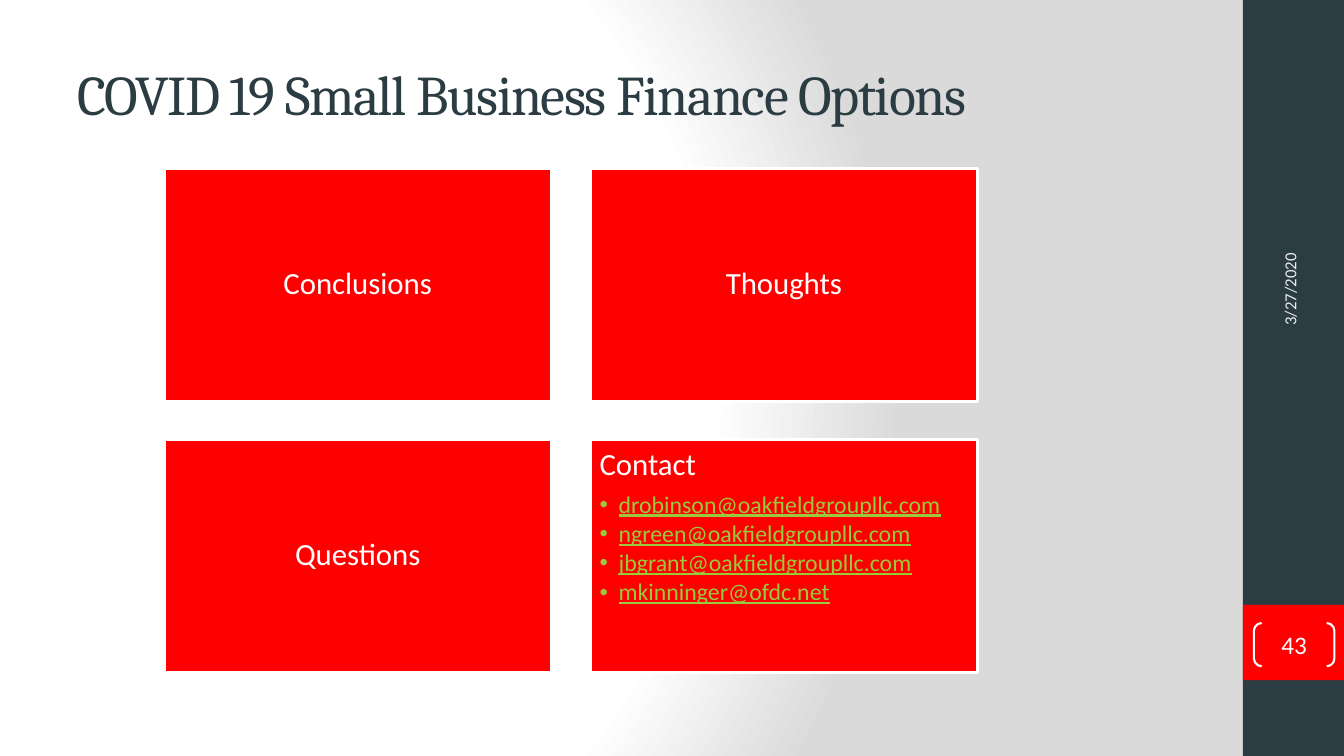
from dataclasses import dataclass

from lxml import etree
from pptx import Presentation
from pptx.dml.color import RGBColor
from pptx.enum.shapes import MSO_SHAPE
from pptx.enum.text import MSO_ANCHOR, MSO_AUTO_SIZE, PP_ALIGN
from pptx.oxml import parse_xml
from pptx.oxml.ns import qn
from pptx.util import Cm, Pt

RECTANGLE, BRACKETS = MSO_SHAPE.RECTANGLE, MSO_SHAPE.DOUBLE_BRACKET
TOP, MIDDLE = MSO_ANCHOR.TOP, MSO_ANCHOR.MIDDLE
LEFT, CENTER = PP_ALIGN.LEFT, PP_ALIGN.CENTER
NO_AUTOFIT = MSO_AUTO_SIZE.NONE


@dataclass(frozen=True)
class Theme:
    slate: str = "2C3C43"
    red: str = "FF0000"
    white: str = "FFFFFF"
    gray: str = "DADADA"
    green: str = "99CA3C"
    pale: str = "EBEBEB"
    heading_font: str = "Cambria"
    body_font: str = "Calibri"
    title_size: int = 40
    card_size: int = 22
    email_size: int = 17
    number_size: int = 18
    date_size: int = 12


THEME = Theme()


def write(frame, text, size, color=THEME.white, font=THEME.body_font, align=LEFT,
          anchor=MIDDLE, inset=None, bullet=False, underline=None,
          line_spacing=None, space_after=0, tracking=None):
    """Append one formatted paragraph, filling the empty first one if there is one."""
    frame.word_wrap = True
    frame.auto_size = NO_AUTOFIT
    frame.vertical_anchor = anchor
    if inset is not None:
        frame.margin_left = frame.margin_right = Cm(inset)
        frame.margin_top = frame.margin_bottom = Cm(inset)

    paragraph = frame.paragraphs[0] if not frame.text else frame.add_paragraph()
    properties = paragraph._p.get_or_add_pPr()
    indent = Cm(0.48) if bullet else 0
    properties.set("marL", str(indent))
    properties.set("indent", str(-indent))
    if bullet:
        etree.SubElement(properties, qn("a:buChar")).set("char", "•")
    else:
        etree.SubElement(properties, qn("a:buNone"))
    paragraph.alignment = align
    paragraph.line_spacing = line_spacing
    paragraph.space_before = Pt(0)
    paragraph.space_after = Pt(space_after)

    run = paragraph.add_run()
    run.text = text
    run.font.size = Pt(size)
    run.font.name = font
    run.font.color.rgb = RGBColor.from_string(color)
    run.font.underline = underline
    if tracking is not None:
        run._r.get_or_add_rPr().set("spc", str(tracking))


def paint(shape, fill=None, line=None, width=0):
    if fill:
        shape.fill.solid()
        shape.fill.fore_color.rgb = RGBColor.from_string(fill)
    else:
        shape.fill.background()
    if line:
        shape.line.color.rgb = RGBColor.from_string(line)
        shape.line.width = Pt(width)
    else:
        shape.line.fill.background()


deck = Presentation()
deck.slide_width, deck.slide_height = Cm(33.87), Cm(19.05)
slide = deck.slides.add_slide(deck.slide_layouts[1])
shapes = slide.shapes

# Background: white glow fading to gray on the right
slide.background.fill.solid()
solid = slide.background._cSld.bg.bgPr.find(qn("a:solidFill"))
stops = "".join(
    f'<a:gs pos="{position}"><a:srgbClr val="{color}"/></a:gs>'
    for position, color in ((0, THEME.white), (75000, THEME.white), (100000, THEME.gray)))
solid.getparent().replace(solid, parse_xml(
    '<a:gradFill xmlns:a="http://schemas.openxmlformats.org/drawingml/2006/main" '
    f'rotWithShape="1"><a:gsLst>{stops}</a:gsLst><a:path path="circle">'
    '<a:fillToRect l="20000" t="50000" r="100000" b="50000"/></a:path></a:gradFill>'))

# Sidebar with its page tab
for top, height, color in ((0, 19.05, THEME.slate), (15.24, 1.9, THEME.red)):
    band = shapes.add_shape(RECTANGLE, Cm(31.32), Cm(top), Cm(2.55), Cm(height))
    band.shadow.inherit = False
    paint(band, color)

title = shapes.title
title.left, title.top, title.width, title.height = Cm(1.7), Cm(0.76), Cm(28.22), Cm(3.18)
write(title.text_frame, "COVID 19 Small Business Finance Options", THEME.title_size,
      THEME.slate, THEME.heading_font, line_spacing=1.0, tracking=-100)

# Two by two cards; the last one is the contact list
CARD_WIDTH, CARD_HEIGHT = 9.75, 5.87
card_style = dict(inset=0.23, line_spacing=0.9)
for index, label in enumerate(("Conclusions", "Thoughts", "Questions", "Contact")):
    row, column = divmod(index, 2)
    place = (Cm(4.14 + column * 10.74), Cm(4.24 + row * 6.83),
             Cm(CARD_WIDTH), Cm(CARD_HEIGHT))
    if label == "Contact":
        contact = slide.placeholders[1]
        contact.left, contact.top, contact.width, contact.height = place
        paint(contact, THEME.red, THEME.white, 2)
        write(contact.text_frame, label, THEME.card_size, anchor=TOP,
              space_after=7.7, **card_style)
    else:
        card = shapes.add_shape(RECTANGLE, *place)
        card.shadow.inherit = False
        paint(card, THEME.red, THEME.white, 2)
        write(card.text_frame, label, THEME.card_size, align=CENTER, **card_style)

for email in ("drobinson@oakfieldgroupllc.com", "ngreen@oakfieldgroupllc.com",
              "jbgrant@oakfieldgroupllc.com", "mkinninger@ofdc.net"):
    write(contact.text_frame, email, THEME.email_size, THEME.green, anchor=TOP,
          bullet=True, underline=True, space_after=2.55, **card_style)

date = shapes.add_textbox(Cm(29.11), Cm(4.39), Cm(6.78), Cm(1.35))
date.rotation = 270
write(date.text_frame, "3/27/2020", THEME.date_size, THEME.pale)

page_number = shapes.add_shape(BRACKETS, Cm(31.6), Cm(15.7), Cm(2.03), Cm(1.09))
page_number.shadow.inherit = False
page_number.adjustments[0] = 0.18
paint(page_number, line=THEME.white, width=1.5)
write(page_number.text_frame, "43", THEME.number_size, align=CENTER, inset=0)

deck.save("out.pptx")
